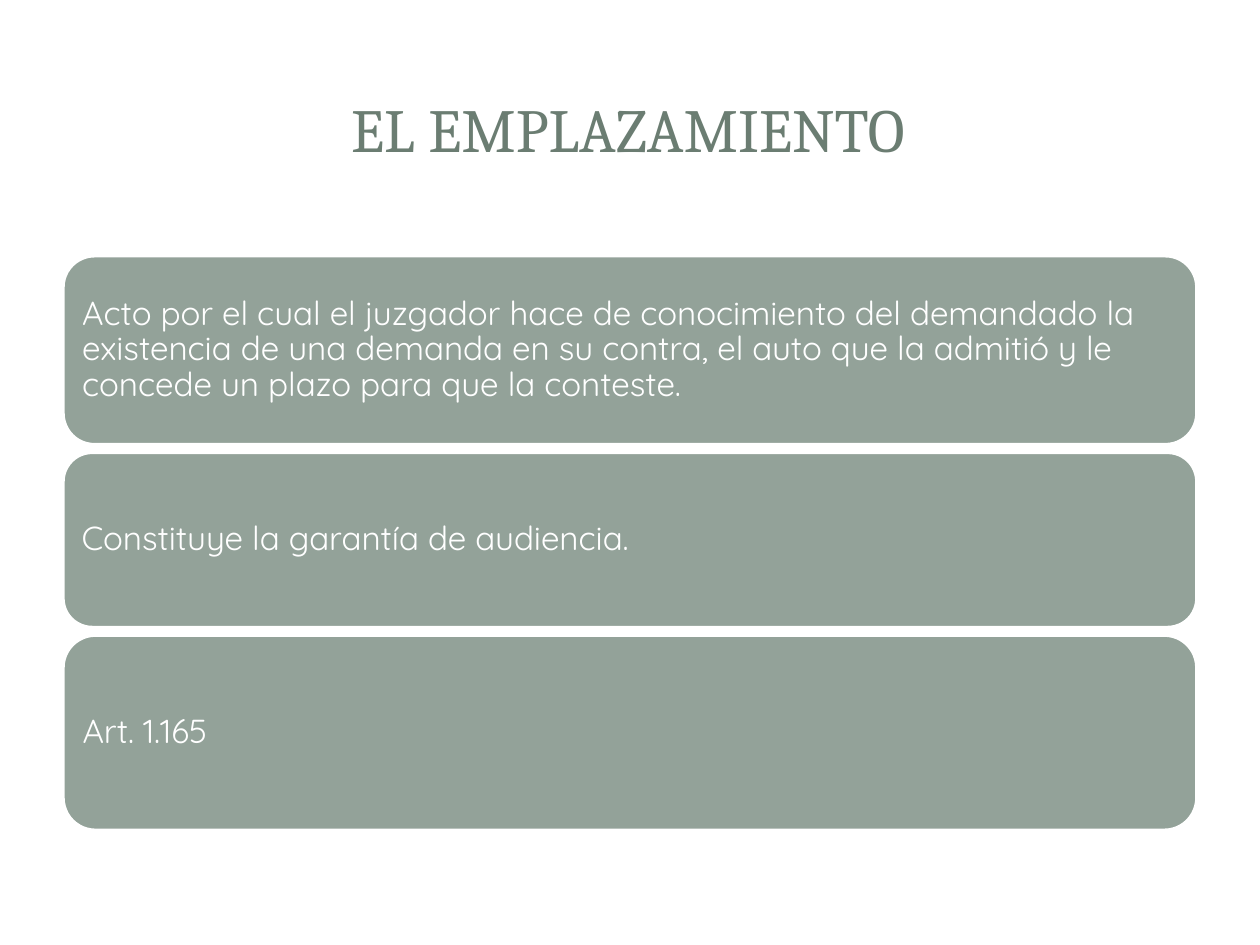
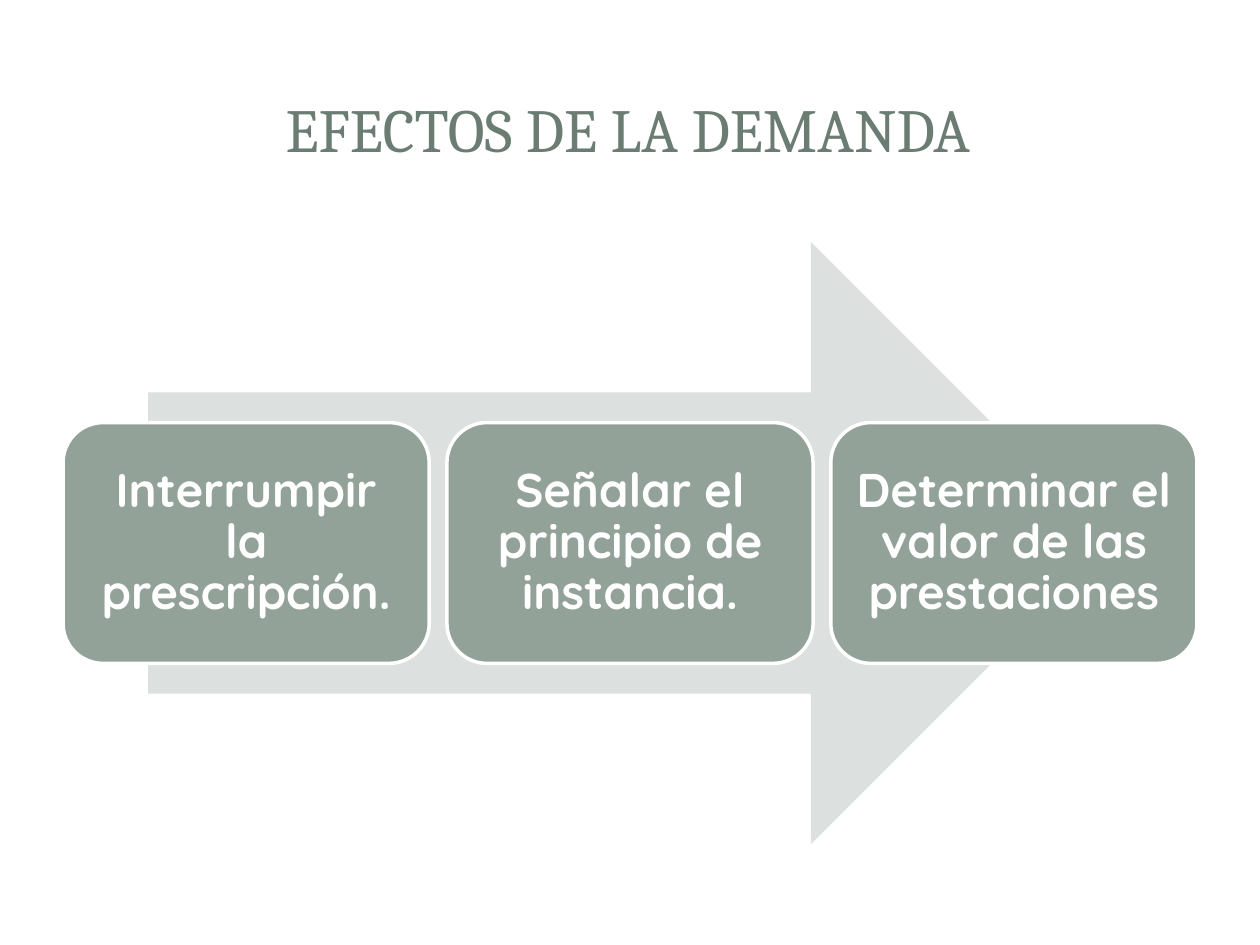
from pptx import Presentation
from pptx.dml.color import RGBColor
from pptx.enum.shapes import MSO_SHAPE
from pptx.enum.text import MSO_ANCHOR, PP_ALIGN
from pptx.util import Inches, Pt

COLORS = {"title": "6B7D72", "card": "93A299", "arrow": "DCE0DE", "white": "FFFFFF"}
TITLE_FONT, BODY_FONT = "Cambria", "Quicksand"
TITLE_BOX = (0.47, 0.45, 9.03, 1.14)


def color(name):
    return RGBColor.from_string(COLORS[name])


def write_text(shape, text, *, size, font=BODY_FONT, fill="white", bold=False,
               align=PP_ALIGN.LEFT, spacing=1.0, inset=0.08):
    """Write one vertically centred paragraph into a shape."""
    frame = shape.text_frame
    frame.word_wrap = True
    frame.vertical_anchor = MSO_ANCHOR.MIDDLE
    frame.margin_left = frame.margin_right = Inches(inset)
    frame.margin_top = frame.margin_bottom = Inches(inset)
    paragraph = frame.paragraphs[0]
    paragraph.alignment = align
    paragraph.line_spacing = spacing
    run = paragraph.add_run()
    run.text = text
    run.font.name = font
    run.font.size = Pt(size)
    run.font.bold = bold
    run.font.color.rgb = color(fill)


def add_block(slide, kind, box, fill, outline=None):
    shape = slide.shapes.add_shape(kind, *map(Inches, box))
    shape.shadow.inherit = False
    shape.fill.solid()
    shape.fill.fore_color.rgb = color(fill)
    if outline:
        shape.line.color.rgb = color(outline)
        shape.line.width = Pt(2)
    else:
        shape.line.fill.background()
    return shape


def add_card(slide, box, text, **text_format):
    card = add_block(slide, MSO_SHAPE.ROUNDED_RECTANGLE, box, "card", outline="white")
    write_text(card, text, spacing=0.9, **text_format)


def add_titled_slide(presentation, title):
    slide = presentation.slides.add_slide(presentation.slide_layouts[6])
    title_box = slide.shapes.add_textbox(*map(Inches, TITLE_BOX))
    write_text(title_box, title, size=35, font=TITLE_FONT, fill="title",
               align=PP_ALIGN.CENTER)
    return slide


def add_card_stack(slide, box, cards, gap=0.06):
    """Stack full-width cards; each card is a (share of height, text) pair."""
    left, top, width, height = box
    unit = (height - gap * (len(cards) - 1)) / sum(share for share, _ in cards)
    for share, text in cards:
        add_card(slide, (left, top, width, share * unit), text, size=19)
        top += share * unit + gap


def add_arrow_process(slide, box, steps, gap=0.14):
    """Place a row of equal cards over a wide arrow."""
    left, top, width, height = box

    # Background arrow spans 85% of the width
    arrow_width = width * 0.85
    arrow_box = (left + (width - arrow_width) / 2, top, arrow_width, height)
    add_block(slide, MSO_SHAPE.RIGHT_ARROW, arrow_box, "arrow")

    # Cards take 40% of the height, centred
    card_width = (width - gap * (len(steps) - 1)) / len(steps)
    for index, text in enumerate(steps):
        card_box = (left + index * (card_width + gap), top + height * 0.3,
                    card_width, height * 0.4)
        add_card(slide, card_box, text, size=27, bold=True,
                 align=PP_ALIGN.CENTER, inset=0.11)


def main():
    presentation = Presentation()
    presentation.slide_width = Inches(10)
    presentation.slide_height = Inches(7.5)

    # Summons
    slide = add_titled_slide(presentation, "EL EMPLAZAMIENTO")
    add_card_stack(slide, (0.5, 2.03, 9, 4.56), [
        (1.5, "Acto por el cual el juzgador hace de conocimiento del demandado la "
              "existencia de una demanda en su contra, el auto que la admitió y le "
              "concede un plazo para que la conteste."),
        (1.39, "Constituye la garantía de audiencia."),
        (1.55, "Art. 1.165"),
    ])

    # Effects of the claim
    slide = add_titled_slide(presentation, "EFECTOS DE LA DEMANDA")
    add_arrow_process(slide, (0.5, 1.92, 9, 4.78), [
        "Interrumpir la prescripción.",
        "Señalar el principio de instancia.",
        "Determinar el valor de las prestaciones",
    ])

    presentation.save("out.pptx")


if __name__ == "__main__":
    main()
